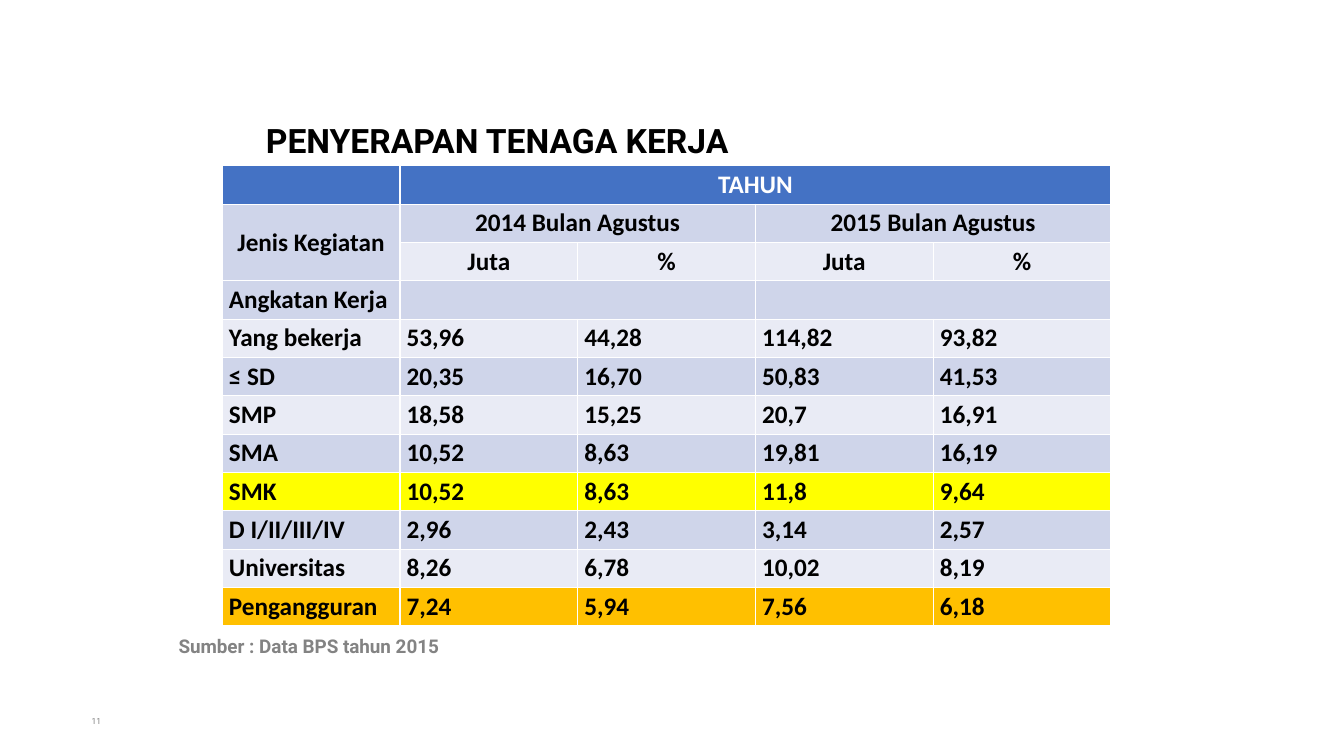
from lxml.etree import SubElement as Sub
from pptx import Presentation
from pptx.dml.color import RGBColor as Rgb
from pptx.enum.text import MSO_ANCHOR as Anchor, PP_ALIGN as Align
from pptx.oxml.ns import qn
from pptx.util import Cm, Pt

HUES = {"head": "4472C4", "dark": "CFD5EA", "light": "E9EBF5", "smk": "FFFF00",
        "jobless": "FFC000", "ink": "000000", "white": "FFFFFF", "gray": "838383"}
ROWS = [
    ["", "TAHUN", "", "", ""],
    ["Jenis Kegiatan", "2014 Bulan Agustus", "", "2015 Bulan Agustus", ""],
    ["", "Juta", "%", "Juta", "%"],
    ["Angkatan Kerja", "", "", "", ""],
    ["Yang bekerja", "53,96", "44,28", "114,82", "93,82"],
    ["≤ SD", "20,35", "16,70", "50,83", "41,53"],
    ["SMP", "18,58", "15,25", "20,7", "16,91"],
    ["SMA", "10,52", "8,63", "19,81", "16,19"],
    ["SMK", "10,52", "8,63", "11,8", "9,64"],
    ["D I/II/III/IV", "2,96", "2,43", "3,14", "2,57"],
    ["Universitas", "8,26", "6,78", "10,02", "8,19"],
    ["Pengangguran", "7,24", "5,94", "7,56", "6,18"],
]
SPANS = [(0, 1, 0, 4), (1, 0, 2, 0), (1, 1, 1, 2), (1, 3, 1, 4), (3, 1, 3, 2), (3, 3, 3, 4)]
MARKS = {0: "head", 8: "smk", 11: "jobless"}
HEADS = 3


def style(para, face, size, hue, bold=True):
    """Set the font of a paragraph."""
    font = para.font
    font.name, font.size, font.bold = face, Pt(size), bold
    font.color.rgb = Rgb.from_string(HUES[hue])


def label(slide, box, text, size, hue, bold=True, anchor=Anchor.MIDDLE):
    """Place a line of text in a box and return its paragraph."""
    frame = slide.shapes.add_textbox(*map(Cm, box)).text_frame
    frame.word_wrap = True
    frame.vertical_anchor = anchor
    para = frame.paragraphs[0]
    para.text = text
    style(para, "Roboto", size, hue, bold)
    return para


def edge(cell):
    """Draw thin white borders around a cell."""
    props = cell._tc.get_or_add_tcPr()
    for spot, side in enumerate(("lnL", "lnR", "lnT", "lnB")):
        line = Sub(props, qn(f"a:{side}"), w=str(Pt(1)))
        fill = Sub(line, qn("a:solidFill"))
        Sub(fill, qn("a:srgbClr"), val=HUES["white"])
        props.insert(spot, line)


def paint(cell, text, row):
    """Fill one table cell and set its text."""
    cell.margin_left = cell.margin_right = Cm(0.17)
    cell.margin_top = cell.margin_bottom = Cm(0.09)
    cell.fill.solid()
    hue = MARKS.get(row, "dark" if row % 2 else "light")
    cell.fill.fore_color.rgb = Rgb.from_string(HUES[hue])
    edge(cell)
    para = cell.text_frame.paragraphs[0]
    para.text = text
    para.alignment = Align.CENTER if row < HEADS else Align.LEFT
    style(para, "Calibri", 18, "ink" if row else "white")


def grid(slide, box):
    """Build the table of jobs by schooling."""
    left, top, width, height = map(Cm, box)
    table = slide.shapes.add_table(len(ROWS), len(ROWS[0]), left, top, width, height).table
    for row, texts in enumerate(ROWS):
        for col, text in enumerate(texts):
            paint(table.cell(row, col), text, row)
    for top_row, first, low_row, last in SPANS:
        table.cell(top_row, first).merge(table.cell(low_row, last))
    table.cell(1, 0).vertical_anchor = Anchor.MIDDLE


def main():
    """Build the slide and save it."""
    deck = Presentation()
    deck.slide_width, deck.slide_height = Cm(33.87), Cm(19.05)
    slide = deck.slides.add_slide(deck.slide_layouts[6])
    title = label(slide, (6.45, 2.95, 20.62, 1.32), "PENYERAPAN TENAGA KERJA", 24, "ink",
                  anchor=Anchor.TOP)
    title.line_spacing = Pt(27)
    grid(slide, (5.6, 4.18, 22.4, 11.6))
    label(slide, (4.25, 15.9, 8.6, 0.76), "Sumber : Data BPS tahun 2015", 13.5, "gray")
    page = label(slide, (0.8, 17.65, 2, 1.02), "11", 6, "gray", bold=False)
    page.alignment = Align.RIGHT
    deck.save("out.pptx")


if __name__ == "__main__":
    main()
